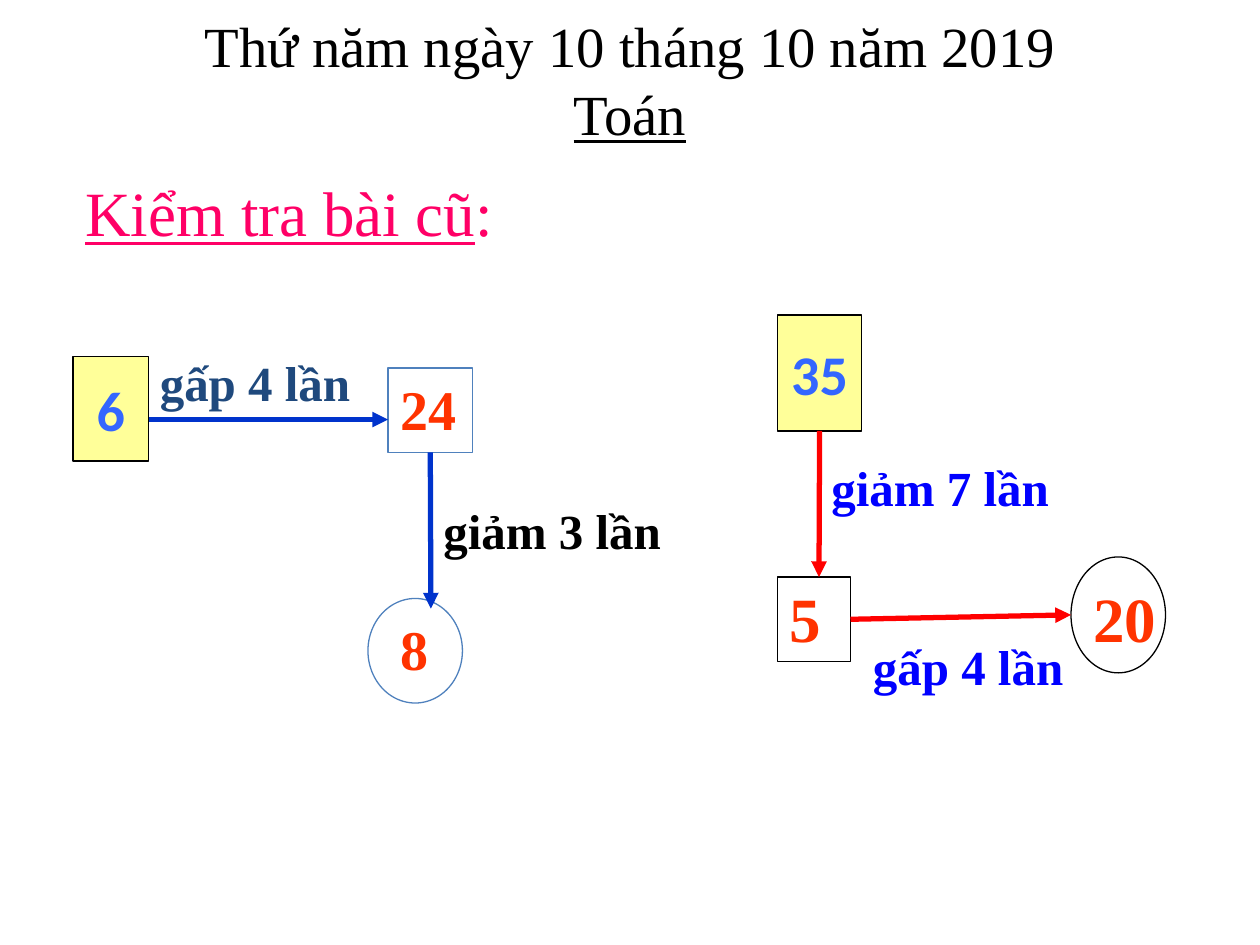
from dataclasses import dataclass

from pptx import Presentation
from pptx.dml.color import RGBColor
from pptx.enum import shapes, text
from pptx.oxml import ns, xmlchemy
from pptx.util import Inches, Pt


@dataclass(frozen=True)
class Theme:
    serif: str = "Times New Roman"
    sans: str = "Calibri"
    white: str = "FFFFFF"
    black: str = "000000"
    yellow: str = "FFFF99"
    number: str = "3366FF"
    answer: str = "FF3300"
    heading: str = "FF0066"
    outline: str = "4F81BD"
    navy: str = "1F497D"
    blue: str = "0000FF"
    left_arrow: str = "0033CC"
    right_arrow: str = "FF0000"
    title_size: float = 32.4
    heading_size: int = 36
    number_size: int = 32
    label_size: int = 28


THEME = Theme()
RECT = shapes.MSO_SHAPE.RECTANGLE
OVAL = shapes.MSO_SHAPE.OVAL
BOTTOM, RIGHT = 2, 3


def color(value):
    return RGBColor.from_string(value)


def add_span(para, words, size, tint, face=THEME.serif, bold=False, underline=False):
    span = para.add_run()
    span.text = words
    span.font.size = Pt(size)
    span.font.name = face
    span.font.bold = bold
    span.font.underline = underline
    span.font.color.rgb = color(tint)


def place(origin, offset):
    return [Inches(start + move) for start, move in zip(origin, offset)]


def add_box(page, origin, offset, size, kind, fill, line):
    box = page.shapes.add_shape(kind, *place(origin, offset), *map(Inches, size))
    box.shadow.inherit = False
    box.fill.solid()
    box.fill.fore_color.rgb = color(fill)
    box.line.color.rgb = color(line)
    box.line.width = Pt(0.75)
    return box


def add_number(page, origin, offset, size, words):
    box = add_box(page, origin, offset, size, RECT, THEME.yellow, THEME.black)
    frame = box.text_frame
    frame.word_wrap = False
    frame.vertical_anchor = text.MSO_ANCHOR.MIDDLE
    para = frame.paragraphs[0]
    para.alignment = text.PP_ALIGN.CENTER
    add_span(para, words, THEME.number_size, THEME.number, THEME.sans, bold=True)
    return box


def add_text_box(page, origin, offset, size, wrap=True, middle=False):
    box = page.shapes.add_textbox(*place(origin, offset), *map(Inches, size))
    frame = box.text_frame
    frame.word_wrap = wrap
    frame.auto_size = text.MSO_AUTO_SIZE.SHAPE_TO_FIT_TEXT
    if middle:
        frame.vertical_anchor = text.MSO_ANCHOR.MIDDLE
    return frame.paragraphs[0]


def add_label(page, origin, offset, size, words, tint, **layout):
    para = add_text_box(page, origin, offset, size, **layout)
    add_span(para, words, THEME.label_size, tint, bold=True)


def add_answer(page, origin, offset, size, words, points):
    para = add_text_box(page, origin, offset, size)
    add_span(para, words, points, THEME.answer, bold=True)


def add_arrow(page, origin, start, end, tint, source=None, side=None):
    arrow = page.shapes.add_connector(
        shapes.MSO_CONNECTOR.STRAIGHT, *place(origin, start), *place(origin, end))
    if source is not None:
        arrow.begin_connect(source, side)
    arrow.line.color.rgb = color(tint)
    arrow.line.width = Pt(3)
    head = xmlchemy.OxmlElement("a:tailEnd")
    head.set("type", "triangle")
    arrow.line._get_or_add_ln().append(head)
    properties = arrow._element.find(ns.qn("p:spPr"))
    properties.append(xmlchemy.OxmlElement("a:effectLst"))


def add_title(page, origin, size):
    title = page.shapes.title
    title.left, title.top = place(origin, (0, 0))
    title.width, title.height = map(Inches, size)
    frame = title.text_frame
    frame.auto_size = text.MSO_AUTO_SIZE.NONE
    frame.vertical_anchor = text.MSO_ANCHOR.MIDDLE
    para = frame.paragraphs[0]
    para.alignment = text.PP_ALIGN.CENTER
    add_span(para, "Thứ năm ngày 10 tháng 10 năm 2019", THEME.title_size, THEME.black)
    para.add_line_break()
    add_span(para, "Toán", THEME.title_size, THEME.black, underline=True)


def add_heading(page, origin, size):
    para = add_text_box(page, origin, (0, 0), size)
    add_span(para, "Kiểm tra bài cũ", THEME.heading_size, THEME.heading, underline=True)
    add_span(para, ":", THEME.heading_size, THEME.heading)


def add_left_chain(page, origin):
    product = add_box(page, origin, (2.5, 0.17), (0.67, 0.67), RECT,
                      THEME.white, THEME.outline)
    add_box(page, origin, (2.34, 2), (0.75, 0.83), OVAL, THEME.white, THEME.outline)
    add_number(page, origin, (0, 0.08), (0.6, 0.83), "6")
    add_label(page, origin, (0.59, 0), (1.72, 0.57), "gấp 4 lần", THEME.navy)
    add_label(page, origin, (2.84, 1.17), (1.95, 0.57), "giảm 3 lần", THEME.black,
              wrap=False, middle=True)
    add_answer(page, origin, (2.5, 0.17), (0.67, 0.63), "24", THEME.number_size)
    add_answer(page, origin, (2.5, 2.08), (0.83, 0.63), "8", THEME.number_size)
    add_arrow(page, origin, (0.6, 0.58), (2.5, 0.58), THEME.left_arrow)
    add_arrow(page, origin, (2.84, 0.84), (2.84, 2.08), THEME.left_arrow,
              product, BOTTOM)


def add_right_chain(page, origin):
    quotient = add_box(page, origin, (0, 2.08), (0.58, 0.67), RECT,
                       THEME.white, THEME.black)
    add_box(page, origin, (2.33, 1.92), (0.75, 0.92), OVAL, THEME.white, THEME.black)
    start = add_number(page, origin, (0, 0), (0.67, 0.92), "35")
    add_arrow(page, origin, (0.33, 0.92), (0.33, 2.08), THEME.right_arrow, start, BOTTOM)
    add_arrow(page, origin, (0.58, 2.43), (2.33, 2.38), THEME.right_arrow,
              quotient, RIGHT)
    add_label(page, origin, (0.33, 1.08), (2.33, 0.57), "giảm 7 lần", THEME.blue,
              middle=True)
    add_label(page, origin, (0.66, 2.5), (1.73, 0.57), "gấp 4 lần", THEME.blue,
              wrap=False, middle=True)
    add_answer(page, origin, (0, 2.05), (0.5, 0.7), "5", THEME.heading_size)
    add_answer(page, origin, (2.41, 2.05), (0.81, 0.7), "20", THEME.heading_size)


def main():
    deck = Presentation()
    deck.slide_width, deck.slide_height = Inches(10), Inches(7.5)
    page = deck.slides.add_slide(deck.slide_layouts[5])
    add_title(page, (0.5, 0), (9, 1.25))
    add_heading(page, (0.58, 1.33), (4.75, 0.7))
    add_left_chain(page, (0.58, 2.75))
    add_right_chain(page, (6.17, 2.5))
    deck.save("out.pptx")


if __name__ == "__main__":
    main()
